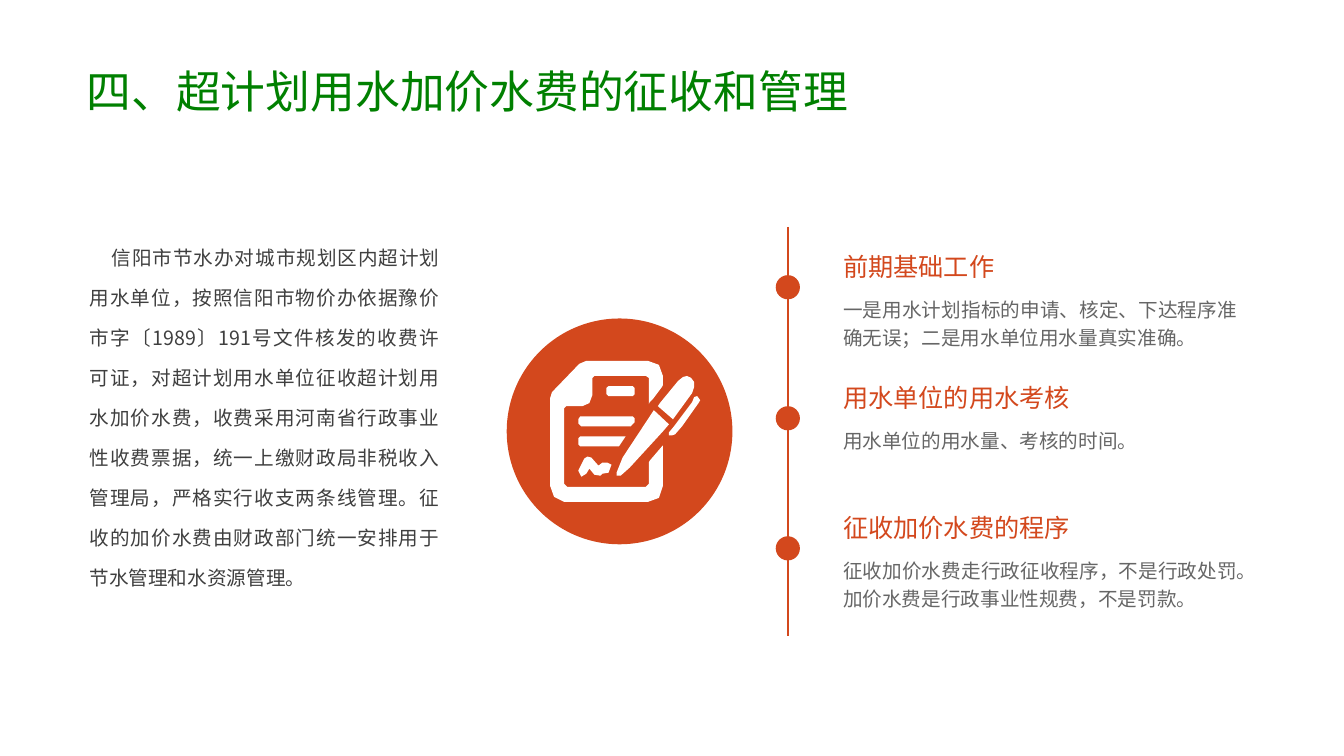
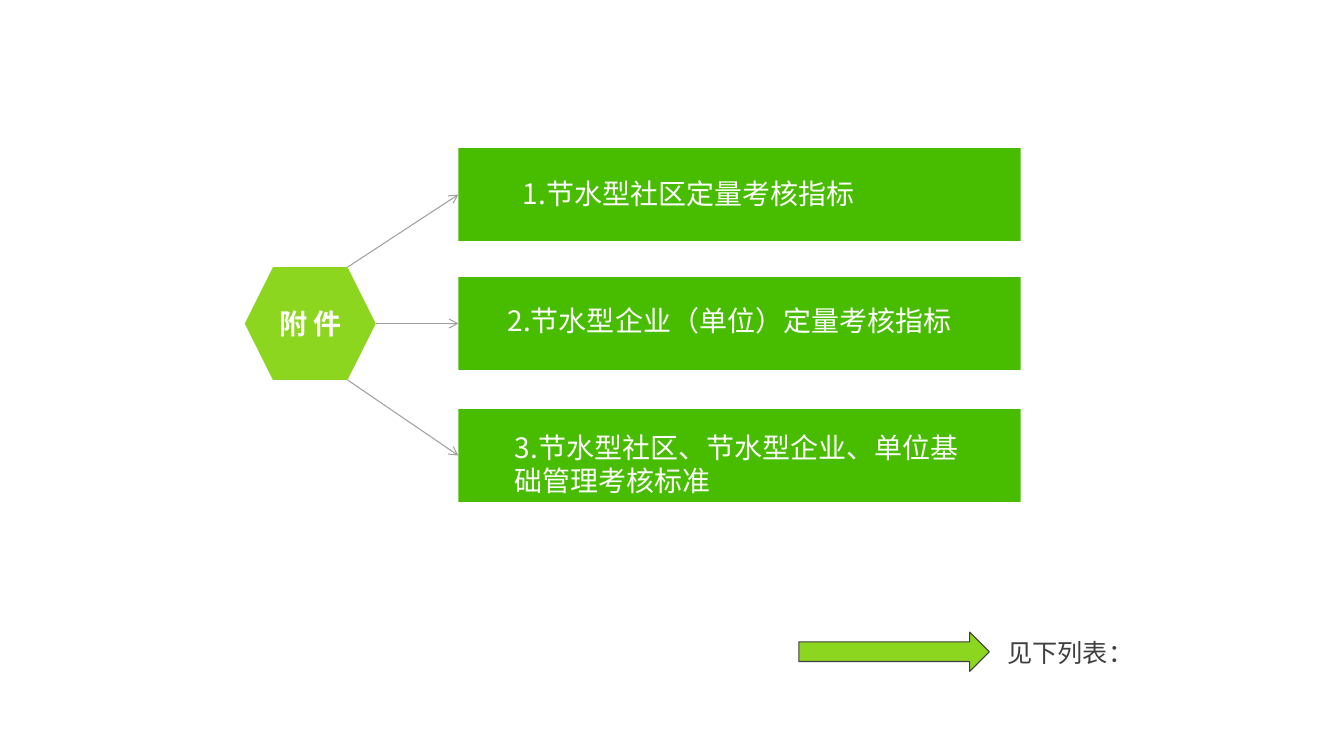
from dataclasses import dataclass

from lxml import etree
from pptx import Presentation
from pptx.dml.color import RGBColor
from pptx.enum.shapes import MSO_CONNECTOR, MSO_SHAPE
from pptx.enum.text import MSO_ANCHOR, MSO_AUTO_SIZE, PP_ALIGN
from pptx.oxml.ns import qn
from pptx.shapes.autoshape import Shape
from pptx.shapes.connector import Connector
from pptx.slide import Slide
from pptx.util import Emu, Pt

PX = 9144
STRAIGHT = MSO_CONNECTOR.STRAIGHT
OVAL = MSO_SHAPE.OVAL
RECTANGLE = MSO_SHAPE.RECTANGLE
HEXAGON = MSO_SHAPE.HEXAGON
RIGHT_ARROW = MSO_SHAPE.RIGHT_ARROW
TOP = MSO_ANCHOR.TOP
MIDDLE = MSO_ANCHOR.MIDDLE
LEFT = PP_ALIGN.LEFT
CENTER = PP_ALIGN.CENTER
JUSTIFY = PP_ALIGN.JUSTIFY
FIT_SHAPE = MSO_AUTO_SIZE.SHAPE_TO_FIT_TEXT
LEFT_SIDE = 1


@dataclass(frozen=True)
class Theme:
    paper: str = "FFFFFF"
    title: str = "008000"
    accent: str = "D3481D"
    band: str = "48BD00"
    lime: str = "8CD620"
    ink: str = "3F3F3F"
    muted: str = "666666"
    arrow: str = "9F9F9F"
    title_font: str = "Montserrat"
    body_font: str = "Noto Sans CJK SC"
    title_size: int = 32
    label_size: int = 20
    heading_size: int = 18
    body_size: int = 14
    axis_width: float = 1.5
    thin_width: float = 0.75


THEME = Theme()


@dataclass(frozen=True)
class Box:
    left: int
    top: int
    width: int
    height: int

    def emu(self) -> tuple[Emu, Emu, Emu, Emu]:
        return px(self.left), px(self.top), px(self.width), px(self.height)


@dataclass(frozen=True)
class TextStyle:
    size: int
    color: str
    font: str = THEME.body_font
    bold: bool = False
    align: PP_ALIGN = LEFT
    spacing: float = 1.0
    indent: int = 0
    anchor: MSO_ANCHOR = TOP


TITLE = TextStyle(THEME.title_size, THEME.title, THEME.title_font, spacing=0.9, anchor=MIDDLE)
NARRATIVE = TextStyle(THEME.body_size, THEME.ink, align=JUSTIFY, spacing=1.7, indent=22)
HEADING = TextStyle(THEME.heading_size, THEME.accent)
DETAIL = TextStyle(THEME.body_size, THEME.muted, align=JUSTIFY, spacing=1.2)
HUB = TextStyle(THEME.label_size, THEME.paper, bold=True, align=CENTER, anchor=MIDDLE)
BAND_LABEL = TextStyle(THEME.label_size, THEME.paper)
POINTER_LABEL = TextStyle(THEME.heading_size, THEME.ink, indent=40, anchor=MIDDLE)


@dataclass(frozen=True)
class Stage:
    top: int
    heading: str
    detail: str
    detail_height: int


STAGES = (
    Stage(244, "前期基础工作",
          "一是用水计划指标的申请、核定、下达程序准确无误；二是用水单位用水量真实准确。", 66),
    Stage(374, "用水单位的用水考核", "用水单位的用水量、考核的时间。", 38),
    Stage(503, "征收加价水费的程序",
          "征收加价水费走行政征收程序，不是行政处罚。加价水费是行政事业性规费，不是罚款。", 66),
)

NARRATIVE_TEXT = (
    "信阳市节水办对城市规划区内超计划用水单位，按照信阳市物价办依据豫价市字〔1989〕191号文件"
    "核发的收费许可证，对超计划用水单位征收超计划用水加价水费，收费采用河南省行政事业性收费票据，"
    "统一上缴财政局非税收入管理局，严格实行收支两条线管理。征收的加价水费由财政部门统一安排用于"
    "节水管理和水资源管理。"
)


@dataclass(frozen=True)
class Attachment:
    text: str
    band_top: int
    label: Box
    arrow_start: tuple[int, int]


ATTACHMENTS = (
    Attachment("1.节水型社区定量考核指标", 147, Box(509, 170, 352, 77), (345, 265)),
    Attachment("2.节水型企业（单位）定量考核指标", 275, Box(494, 296, 464, 77), (373, 321)),
    Attachment("3.节水型社区、节水型企业、单位基础管理考核标准", 406, Box(501, 422, 472, 77), (345, 377)),
)

Outline = tuple[tuple[int, int], ...]

SIGNATURE: Outline = (
    (583, 453), (587, 454), (594, 462), (598, 459), (603, 459), (607, 461), (604, 469), (598, 470),
    (596, 472), (590, 471), (585, 465), (582, 470), (577, 473), (574, 467), (580, 455),
)
LOWER_LINE: Outline = (
    (576, 433), (621, 433), (615, 442), (614, 443), (576, 443), (574, 441), (574, 435),
)
UPPER_LINE: Outline = (
    (576, 413), (628, 413), (630, 415), (630, 419), (626, 423), (577, 423), (574, 420), (574, 416),
)
NIB: Outline = (
    (649, 407), (664, 421), (658, 428), (625, 464), (616, 472), (612, 472), (612, 469), (618, 454),
)
CLIP: Outline = (
    (692, 393), (695, 397), (694, 399), (677, 423), (670, 431), (667, 432), (664, 432), (664, 429),
    (669, 423), (687, 399), (689, 394),
)
TAG: Outline = (
    (604, 383), (628, 383), (630, 385), (630, 391), (628, 393), (604, 393), (602, 391), (602, 385),
)
BARREL: Outline = (
    (682, 373), (686, 375), (689, 379), (689, 384), (687, 390), (668, 416), (653, 403), (655, 400),
    (673, 378), (678, 374),
)
PAGE: Outline = (
    (582, 358), (643, 358), (654, 362), (658, 373), (658, 382), (657, 384), (648, 396), (645, 399),
    (644, 401), (644, 375), (641, 373), (590, 373), (588, 375), (588, 392), (585, 400), (578, 403),
    (562, 403), (560, 405), (560, 480), (563, 483), (641, 483), (644, 480), (644, 459), (645, 457),
    (657, 443), (658, 442), (658, 482), (654, 494), (643, 498), (560, 498), (550, 493), (546, 482),
    (546, 395), (548, 389), (575, 361),
)
CONTRACT_ICON = (SIGNATURE, LOWER_LINE, UPPER_LINE, NIB, CLIP, TAG, BARREL, PAGE)


def px(length: int) -> Emu:
    return Emu(length * PX)


def rgb(color: str) -> RGBColor:
    return RGBColor.from_string(color)


def write(shape: Shape, text: str, style: TextStyle) -> None:
    frame = shape.text_frame
    frame.word_wrap = True
    frame.vertical_anchor = style.anchor
    frame.text = text
    paragraph = frame.paragraphs[0]
    paragraph.alignment = style.align
    paragraph.line_spacing = style.spacing
    if style.indent:
        properties = paragraph._p.get_or_add_pPr()
        properties.set("marL", "0")
        properties.set("indent", str(px(style.indent)))
    for run in paragraph.runs:
        run.font.size = Pt(style.size)
        run.font.bold = style.bold
        run.font.color.rgb = rgb(style.color)
        run.font.name = style.font
        east_asian = etree.SubElement(run._r.get_or_add_rPr(), qn("a:ea"))
        east_asian.set("typeface", THEME.body_font)


def add_text(slide: Slide, box: Box, text: str, style: TextStyle, grow: bool = True) -> None:
    textbox = slide.shapes.add_textbox(*box.emu())
    write(textbox, text, style)
    if grow:
        textbox.text_frame.auto_size = FIT_SHAPE


def paint(shape: Shape, fill: str, line: str | None = None) -> None:
    shape.shadow.inherit = False
    shape.fill.solid()
    shape.fill.fore_color.rgb = rgb(fill)
    if line:
        shape.line.color.rgb = rgb(line)
        shape.line.width = Pt(THEME.thin_width)
    else:
        shape.line.fill.background()


def add_figure(slide: Slide, kind: MSO_SHAPE, box: Box, fill: str, line: str | None = None) -> Shape:
    figure = slide.shapes.add_shape(kind, *box.emu())
    paint(figure, fill, line)
    return figure


def add_line(slide: Slide, start: tuple[int, int], end: tuple[int, int],
             color: str, width: float) -> Connector:
    line = slide.shapes.add_connector(STRAIGHT, *map(px, start + end))
    line.line.color.rgb = rgb(color)
    line.line.width = Pt(width)
    etree.SubElement(line._element.spPr, qn("a:effectLst"))
    return line


def add_icon(slide: Slide, outlines: tuple[Outline, ...], fill: str) -> None:
    builder = slide.shapes.build_freeform(*outlines[0][0], scale=PX)
    for index, outline in enumerate(outlines):
        if index:
            builder.move_to(*outline[0])
        builder.add_line_segments(outline[1:], close=True)
    paint(builder.convert_to_shape(), fill)


def add_stage(slide: Slide, stage: Stage) -> None:
    add_figure(slide, OVAL, Box(770, stage.top + 29, 24, 24), THEME.accent)
    add_text(slide, Box(827, stage.top + 42, 411, stage.detail_height), stage.detail, DETAIL)
    add_text(slide, Box(827, stage.top, 375, 40), stage.heading, HEADING)


def add_attachment(slide: Slide, attachment: Attachment) -> None:
    band_box = Box(455, attachment.band_top, 558, 92)
    band = add_figure(slide, RECTANGLE, band_box, THEME.band)
    band_side = (band_box.left, band_box.top + band_box.height // 2)
    arrow = add_line(slide, attachment.arrow_start, band_side, THEME.arrow, THEME.thin_width)
    arrow.end_connect(band, LEFT_SIDE)
    etree.SubElement(arrow.line._get_or_add_ln(), qn("a:tailEnd")).set("type", "arrow")
    add_text(slide, attachment.label, attachment.text, BAND_LABEL)


def build_collection(slide: Slide) -> None:
    add_text(slide, Box(76, 21, 862, 145), "四、超计划用水加价水费的征收和管理", TITLE, grow=False)
    add_figure(slide, OVAL, Box(503, 316, 224, 224), THEME.accent)
    add_icon(slide, CONTRACT_ICON, THEME.paper)
    add_line(slide, (782, 225), (782, 631), THEME.accent, THEME.axis_width)
    for stage in STAGES:
        add_stage(slide, stage)
    add_text(slide, Box(79, 223, 367, 367), NARRATIVE_TEXT, NARRATIVE)


def build_attachments(slide: Slide) -> None:
    hub = add_figure(slide, HEXAGON, Box(243, 265, 130, 112), THEME.lime)
    write(hub, "附 件", HUB)
    for attachment in ATTACHMENTS:
        add_attachment(slide, attachment)
    add_figure(slide, RIGHT_ARROW, Box(793, 627, 189, 39), THEME.lime, THEME.ink)
    add_text(slide, Box(950, 627, 220, 40), "见下列表：", POINTER_LABEL)


def main() -> None:
    presentation = Presentation()
    presentation.slide_width = px(1334)
    presentation.slide_height = px(750)
    blank = presentation.slide_layouts[6]
    for build in (build_collection, build_attachments):
        build(presentation.slides.add_slide(blank))
    presentation.save("out.pptx")


if __name__ == "__main__":
    main()
